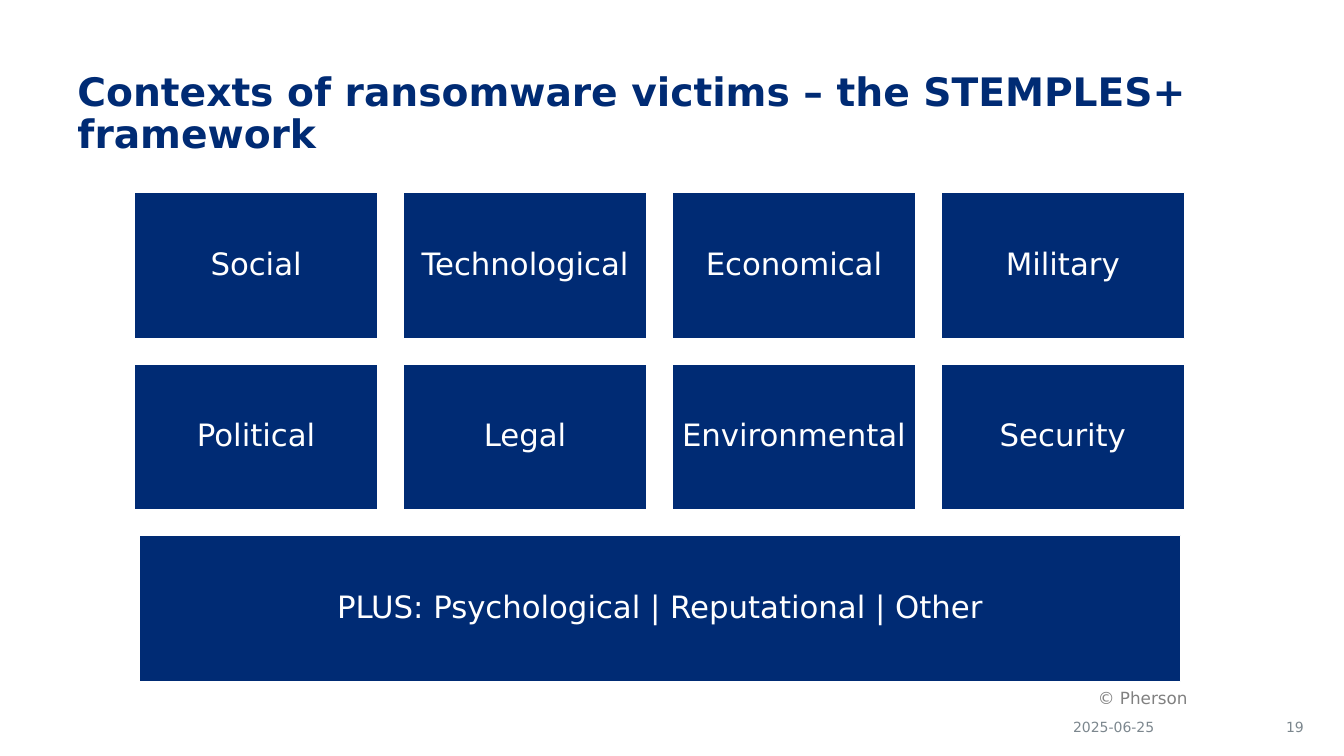
from pptx import Presentation
from pptx.dml.color import RGBColor
from pptx.enum import shapes, text
from pptx.util import Inches, Pt

# Content
TITLE = "Contexts of ransomware victims – the STEMPLES+ framework"
CONTEXTS = [
    ["Social", "Technological", "Economical", "Military"],
    ["Political", "Legal", "Environmental", "Security"],
]
PLUS = "PLUS: Psychological | Reputational | Other"
CREDIT = "© Pherson"
DATE = "2025-06-25"
PAGE = "19"

THEME = {
    "font": "DejaVu Sans",
    "navy": RGBColor(0x00, 0x2B, 0x74),
    "white": RGBColor(0xFF, 0xFF, 0xFF),
    "slate": RGBColor(0x7C, 0x87, 0x8E),
    "grey": RGBColor(0x80, 0x80, 0x80),
    "title": Pt(28),
    "tile": Pt(22),
    "credit": Pt(12),
    "footer": Pt(10),
}

# Layout, in inches
GRID_LEFT, GRID_TOP = 1.33, 1.91
TILE_W, TILE_H = 2.42, 1.45
COLUMN_STEP, ROW_STEP = 2.667, 1.7
PLUS_LEFT, PLUS_W = 1.38, 10.33

LEFT, CENTER, RIGHT = text.PP_ALIGN.LEFT, text.PP_ALIGN.CENTER, text.PP_ALIGN.RIGHT
TOP, MIDDLE = text.MSO_ANCHOR.TOP, text.MSO_ANCHOR.MIDDLE

deck = Presentation()
deck.slide_width, deck.slide_height = Inches(13.33), Inches(7.5)
slide = deck.slides.add_slide(deck.slide_layouts[6])


def write(frame, words, size, color, align=LEFT, anchor=TOP, spacing=1.0, bold=False):
    frame.vertical_anchor = anchor
    paragraph = frame.paragraphs[0]
    paragraph.alignment = align
    paragraph.line_spacing = spacing
    run = paragraph.add_run()
    run.text = words
    run.font.name = THEME["font"]
    run.font.size = THEME[size]
    run.font.color.rgb = THEME[color]
    run.font.bold = bold


def add_label(box, words, size, color, wrap=True, **style):
    frame = slide.shapes.add_textbox(*map(Inches, box)).text_frame
    frame.word_wrap = wrap
    write(frame, words, size, color, **style)


def add_tile(left, top, width, words):
    tile = slide.shapes.add_shape(
        shapes.MSO_SHAPE.RECTANGLE, *map(Inches, (left, top, width, TILE_H)))
    tile.shadow.inherit = False
    tile.fill.solid()
    tile.fill.fore_color.rgb = THEME["navy"]
    tile.line.color.rgb = THEME["white"]
    tile.line.width = Pt(1)
    frame = tile.text_frame
    frame.word_wrap = True
    frame.margin_left = frame.margin_right = Inches(0.09)
    frame.margin_top = frame.margin_bottom = Inches(0.09)
    write(frame, words, "tile", "white", CENTER, MIDDLE, 0.9)


# Title
add_label((0.67, 0.67, 11.75, 1.21), TITLE, "title", "navy", spacing=0.9, bold=True)

# Grid of contexts, with the extra ones in a wide tile below
for row, names in enumerate(CONTEXTS):
    for column, name in enumerate(names):
        add_tile(GRID_LEFT + column * COLUMN_STEP, GRID_TOP + row * ROW_STEP, TILE_W, name)
add_tile(PLUS_LEFT, GRID_TOP + len(CONTEXTS) * ROW_STEP, PLUS_W, PLUS)

# Footer and credit
add_label((10.02, 7.07, 2.05, 0.28), DATE, "footer", "slate", align=CENTER, anchor=MIDDLE)
add_label((12.36, 7.07, 0.67, 0.28), PAGE, "footer", "slate", align=RIGHT, anchor=MIDDLE)
add_label((10.79, 6.77, 1.11, 0.3), CREDIT, "credit", "grey", wrap=False)

deck.save("out.pptx")
